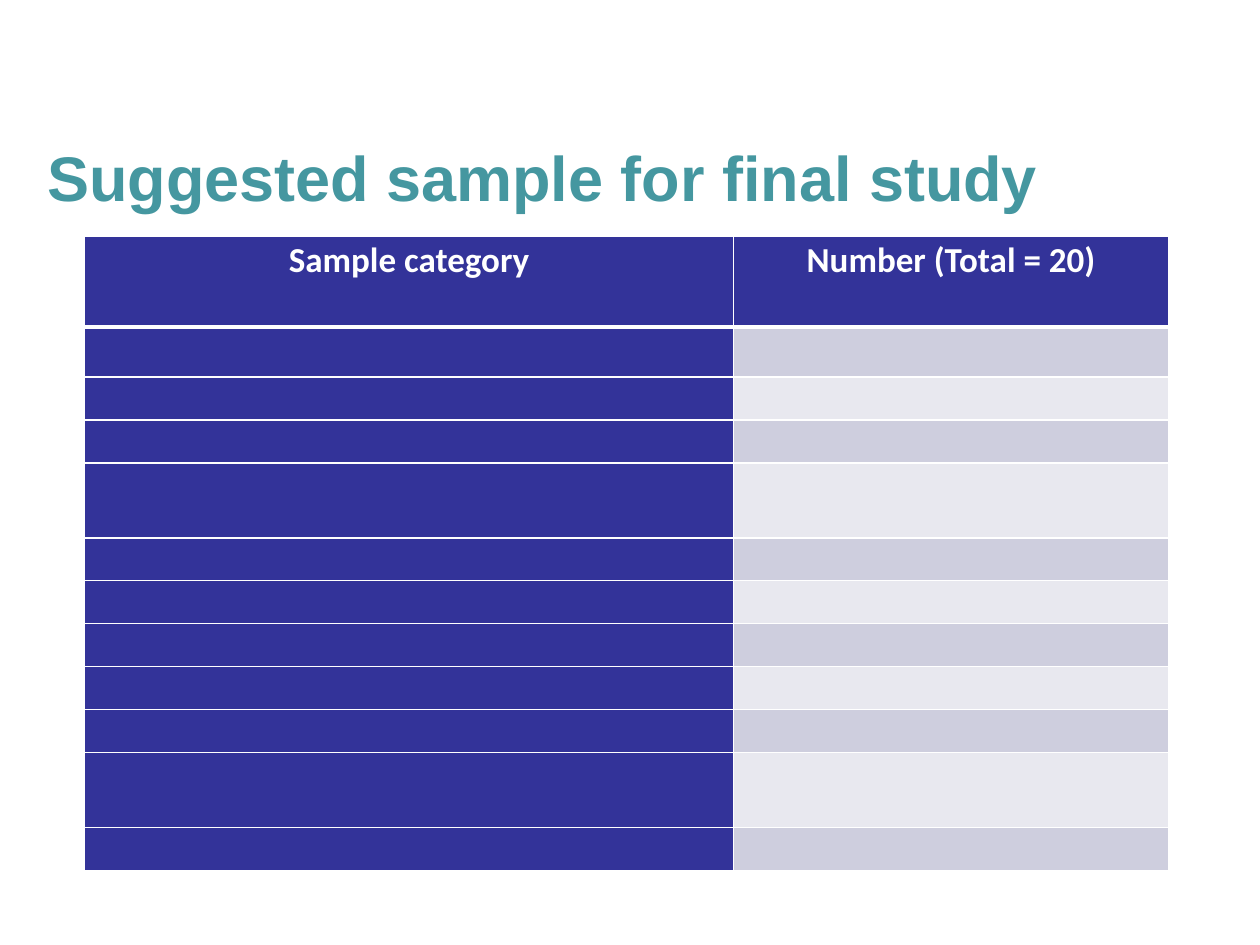
from dataclasses import dataclass

from lxml.etree import SubElement
from pptx import Presentation
from pptx.dml.color import RGBColor
from pptx.enum.text import MSO_ANCHOR, PP_ALIGN
from pptx.oxml.ns import qn
from pptx.slide import Slide
from pptx.table import _Cell
from pptx.text.text import _Paragraph
from pptx.util import Pt

COLOURS = {
    "title": "4597A0",
    "header": "333399",
    "band_dark": "CECEDE",
    "band_light": "E8E8EF",
    "white": "FFFFFF",
}
HEADINGS = ("Sample category", "Number (Total = 20)")
COLUMN_WIDTHS = (370.8, 248.6)
HEADER, FIRST, SINGLE, DOUBLE = 52, 28.6, 24.57, 42.86
ROW_HEIGHTS = (
    HEADER, FIRST, *[SINGLE] * 2, DOUBLE, *[SINGLE] * 5, DOUBLE, SINGLE,
)


@dataclass(frozen=True)
class TextStyle:
    """Font settings of one kind of text."""
    font: str
    size: float
    colour: str


TITLE_STYLE = TextStyle("Arial", 36, "title")
HEADING_STYLE = TextStyle("Calibri", 20, "white")


def format_runs(para: _Paragraph, style: TextStyle) -> None:
    """Apply a bold text style to every run of a paragraph."""
    for span in para.runs:
        span.font.name = style.font
        span.font.size = Pt(style.size)
        span.font.bold = True
        span.font.color.rgb = RGBColor.from_string(COLOURS[style.colour])


def set_borders(cell: _Cell, top: float, bottom: float) -> None:
    """Give a cell white borders, one point wide at the sides."""
    properties = cell._tc.get_or_add_tcPr()
    widths = {"a:lnL": 1, "a:lnR": 1, "a:lnT": top, "a:lnB": bottom}
    for tag, width in widths.items():
        line = SubElement(properties, qn(tag), w=str(Pt(width)))
        fill = SubElement(line, qn("a:solidFill"))
        SubElement(fill, qn("a:srgbClr"), val=COLOURS["white"])


def style_cell(cell: _Cell, row: int, column: int) -> None:
    """Set the margins, borders and fill of a cell from its position."""
    cell.margin_left = cell.margin_right = Pt(4.5)
    cell.margin_top = cell.margin_bottom = Pt(0)
    set_borders(cell, 3 if row == 1 else 1, 3 if row == 0 else 1)
    band = "band_dark" if row % 2 else "band_light"
    name = "header" if row == 0 or column == 0 else band
    cell.fill.solid()
    cell.fill.fore_color.rgb = RGBColor.from_string(COLOURS[name])


def add_title(page: Slide, text: str) -> None:
    """Add the slide title."""
    box = page.shapes.add_textbox(Pt(20), Pt(67), Pt(648), Pt(67.5))
    box.text_frame.word_wrap = True
    box.text_frame.vertical_anchor = MSO_ANCHOR.MIDDLE
    box.text_frame.text = text
    format_runs(box.text_frame.paragraphs[0], TITLE_STYLE)


def add_sample_table(page: Slide) -> None:
    """Add the sample table with its headings and empty rows."""
    table = page.shapes.add_table(
        len(ROW_HEIGHTS), len(COLUMN_WIDTHS), Pt(48.4), Pt(134.8),
        Pt(sum(COLUMN_WIDTHS)), Pt(sum(ROW_HEIGHTS)),
    ).table
    for column, width in zip(table.columns, COLUMN_WIDTHS):
        column.width = Pt(width)
    for row_index, height in enumerate(ROW_HEIGHTS):
        table.rows[row_index].height = Pt(height)
        for column_index in range(len(COLUMN_WIDTHS)):
            style_cell(table.cell(row_index, column_index), row_index, column_index)
    for column_index, heading in enumerate(HEADINGS):
        para = table.cell(0, column_index).text_frame.paragraphs[0]
        para.text = heading
        para.alignment = PP_ALIGN.CENTER
        para.line_spacing = 1.07
        format_runs(para, HEADING_STYLE)


def main() -> None:
    """Build and save the deck."""
    deck = Presentation()
    deck.slide_width, deck.slide_height = Pt(720), Pt(540)
    page = deck.slides.add_slide(deck.slide_layouts[6])
    add_sample_table(page)
    add_title(page, "Suggested sample for final study")
    deck.save("out.pptx")


if __name__ == "__main__":
    main()
